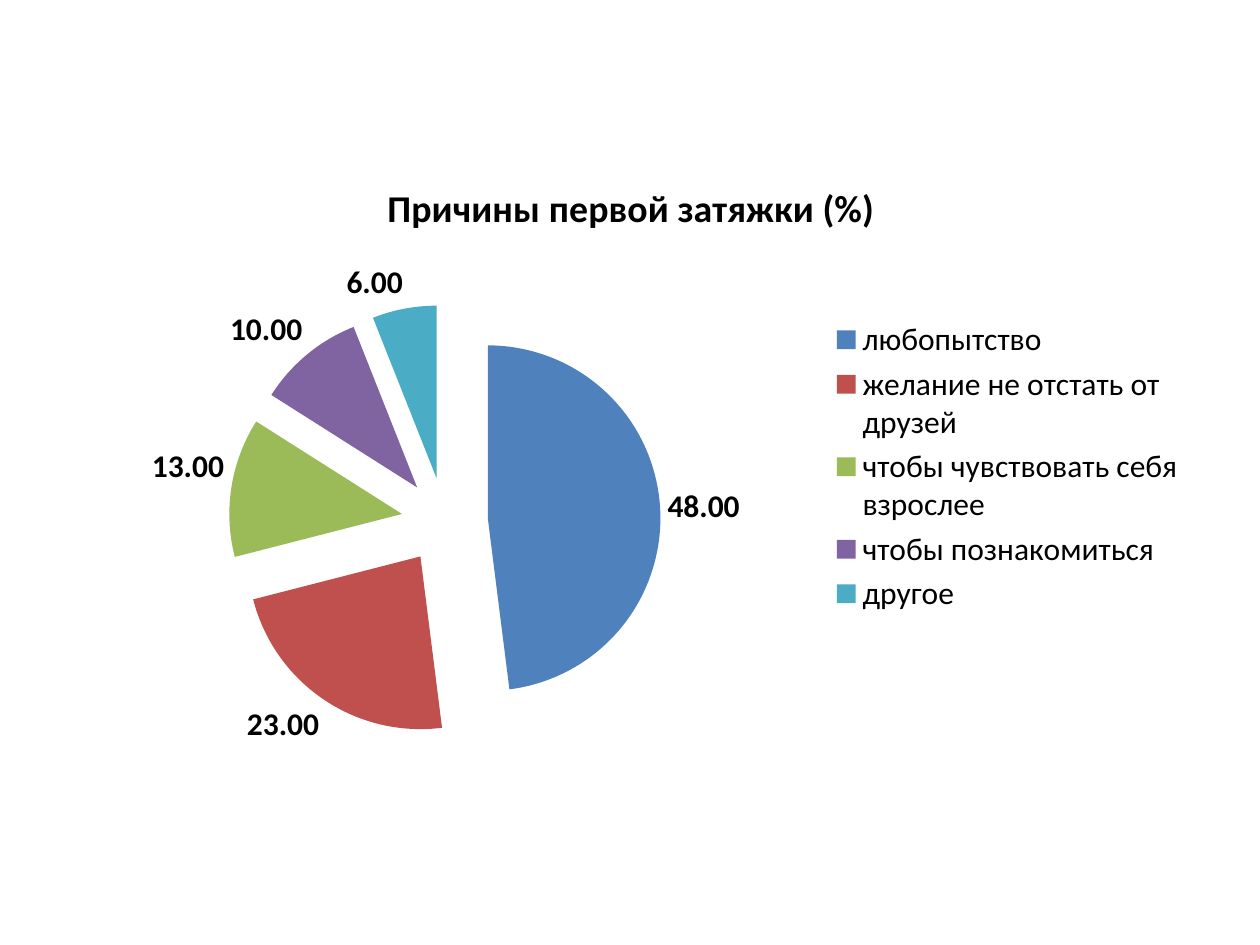
from pptx import Presentation
from pptx.chart.data import CategoryChartData
from pptx.dml.color import RGBColor
from pptx.enum.chart import XL_CHART_TYPE, XL_LABEL_POSITION, XL_LEGEND_POSITION
from pptx.oxml import parse_xml
from pptx.oxml.ns import nsdecls
from pptx.util import Inches, Pt

TITLE = "Причины первой затяжки (%)"
BLACK = RGBColor(0x00, 0x00, 0x00)
REASONS = [
    ("любопытство", 48, RGBColor(0x4F, 0x81, 0xBD)),
    ("желание не отстать от друзей ", 23, RGBColor(0xC0, 0x50, 0x4D)),
    ("чтобы чувствовать себя взрослее ", 13, RGBColor(0x9B, 0xBB, 0x59)),
    ("чтобы познакомиться", 10, RGBColor(0x80, 0x64, 0xA2)),
    ("другое", 6, RGBColor(0x4B, 0xAC, 0xC6)),
]
EXPLOSION = 25
BODY_FONT = {"name": "Calibri", "size": Pt(18), "bold": False}
LABEL_FONT = {**BODY_FONT, "bold": True}
TITLE_FONT = {**LABEL_FONT, "size": Pt(21.6)}


def format_font(font, values):
    for attribute, value in values.items():
        setattr(font, attribute, value)
    font.color.rgb = BLACK


def explode(point):
    """Move a slice away from the centre of the pie."""
    properties = point.format.element.spPr if hasattr(point.format, "element") else None
    return properties


def add_reasons_chart(slide):
    data = CategoryChartData(number_format="0.00")
    data.categories = [reason for reason, _, _ in REASONS]
    data.add_series(TITLE, [share for _, share, _ in REASONS])
    chart = slide.shapes.add_chart(
        XL_CHART_TYPE.PIE, Inches(0.51), Inches(1.23), Inches(9), Inches(4.95), data
    ).chart
    format_font(chart.font, BODY_FONT)

    chart.has_title = True
    chart.chart_title.text_frame.text = TITLE
    format_font(chart.chart_title.text_frame.paragraphs[0].runs[0].font, TITLE_FONT)

    chart.has_legend = True
    chart.legend.position = XL_LEGEND_POSITION.RIGHT
    chart.legend.include_in_layout = False
    format_font(chart.legend.font, BODY_FONT)
    return chart


def format_slices(plot):
    plot.vary_by_categories = True
    series = plot.series[0]
    for index, (_, _, color) in enumerate(REASONS):
        fill = series.points[index].format.fill
        fill.solid()
        fill.fore_color.rgb = color
    explosion = f'<c:explosion {nsdecls("c")} val="{EXPLOSION}"/>'
    for properties in series._element.xpath("c:dPt/c:spPr"):
        properties.addprevious(parse_xml(explosion))
    series._element.xpath("c:tx")[0].addnext(parse_xml(explosion))

    labels = series.data_labels
    label_format = {
        "show_value": True,
        "show_percentage": False,
        "position": XL_LABEL_POSITION.OUTSIDE_END,
        "number_format": "0.00",
        "number_format_is_linked": False,
    }
    for attribute, value in label_format.items():
        setattr(labels, attribute, value)
    format_font(labels.font, LABEL_FONT)


def main():
    presentation = Presentation()
    presentation.slide_width = Inches(10)
    presentation.slide_height = Inches(7.5)
    slide = presentation.slides.add_slide(presentation.slide_layouts[6])
    chart = add_reasons_chart(slide)
    format_slices(chart.plots[0])
    presentation.save("out.pptx")


if __name__ == "__main__":
    main()
